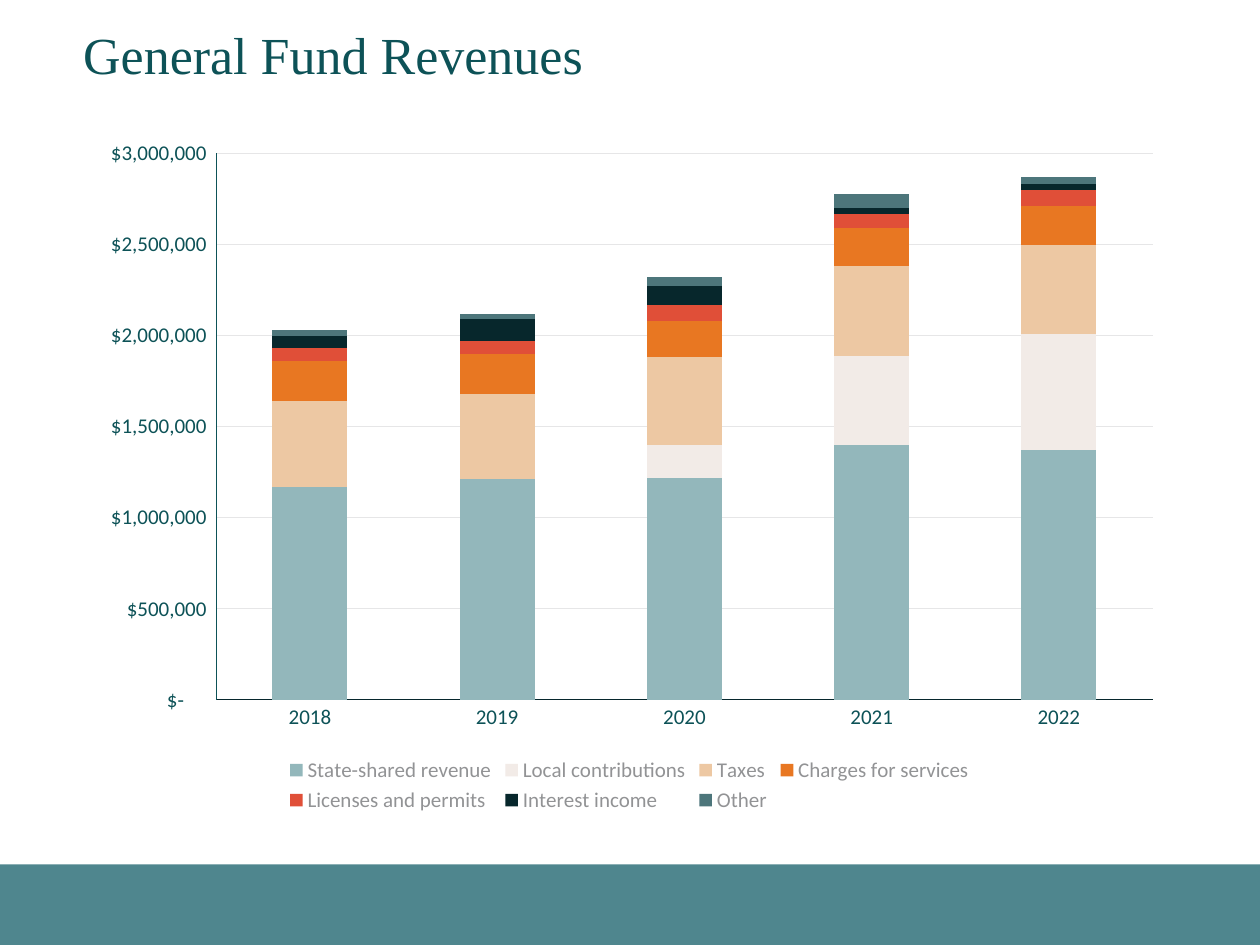
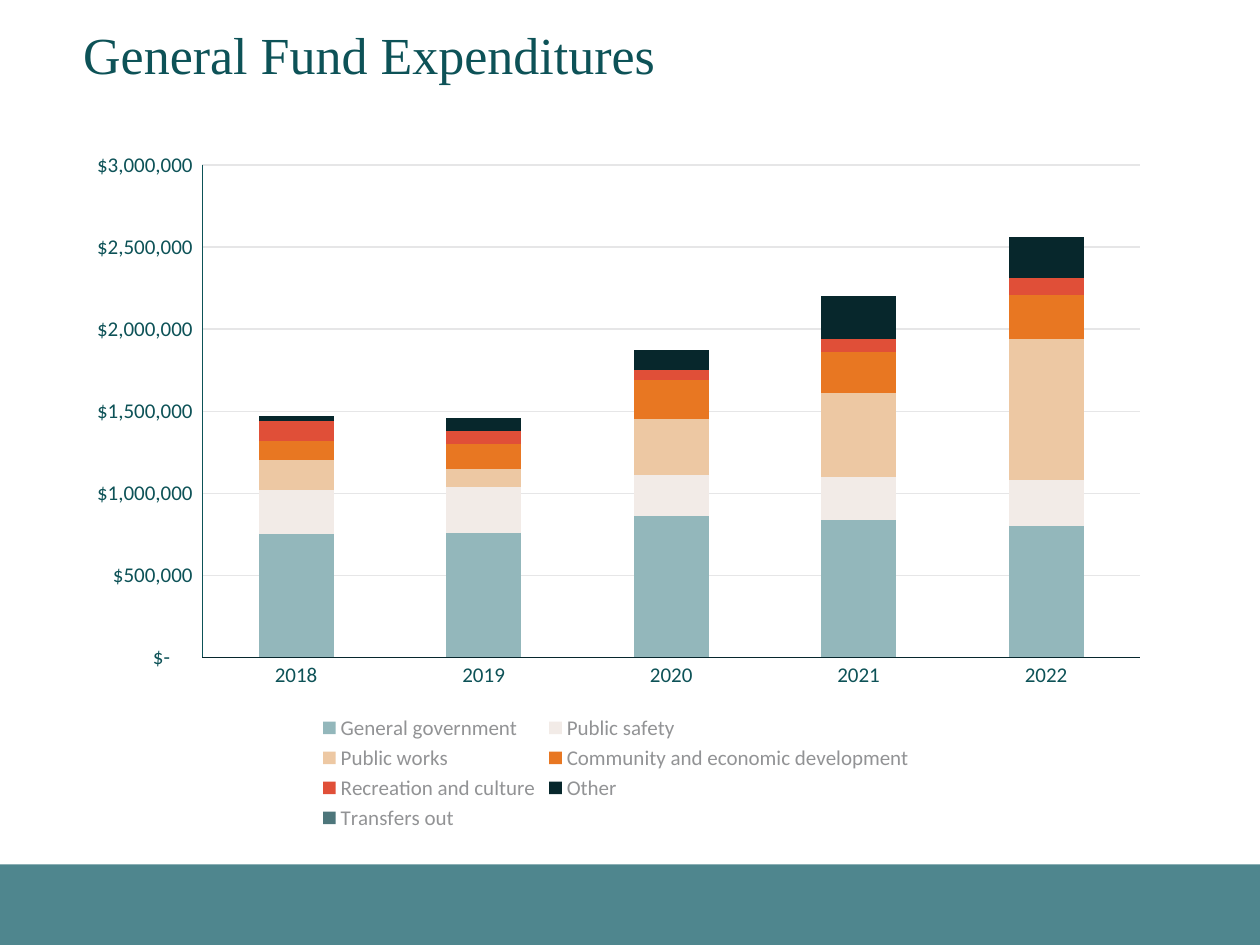
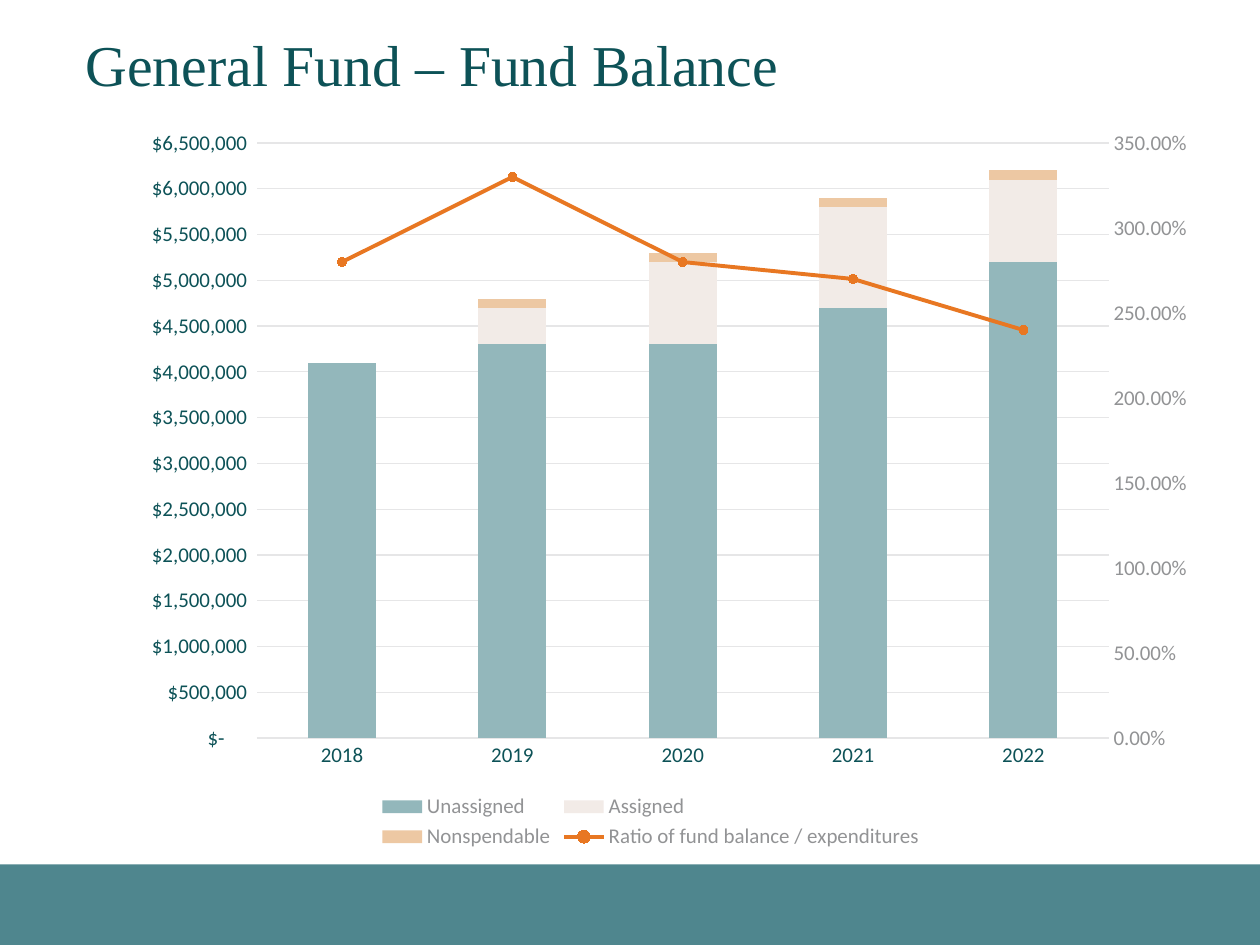
from pptx import Presentation, util as u
from pptx.chart import axis as ax, data as cd
from pptx.dml import color
from pptx.enum import chart as ch, shapes, text
from pptx.oxml import ns, parse_xml

# Shared style
SANS, SERIF = "Calibri", "Times New Roman"
TEAL, DARK, BAND, GREY, GRID = "0D5257", "07272D", "4F868E", "929395", "E6E6E7"
SERIES_COLORS = ["93B7BB", "F2EBE7", "EDC8A3", "E87722", "E04F38", "07272C", "4D767B"]
DOLLARS = '_("$"* #,##0_);_("$"* \\(#,##0\\);_("$"* "-"??_);_(@_)'
YEARS = ["2018", "2019", "2020", "2021", "2022"]
COLS, ROWS = 100, 75  # slide grid


def rgb(code):
    return color.RGBColor.from_string(code)


def put(obj, **values):
    for name, value in values.items():
        setattr(obj, name, value)


def set_font(font, size, code, name=SANS):
    put(font, size=u.Pt(size), name=name)
    font.color.rgb = rgb(code)


def set_line(line, code, width=0.75):
    if code is None:
        line.fill.background()
    else:
        line.color.rgb = rgb(code)
        line.width = u.Pt(width)


class Deck:
    """Holds the style, the grid and the current slide."""

    def __init__(self):
        self.prs = Presentation()
        put(self.prs, slide_width=u.Inches(10), slide_height=u.Inches(7.5))
        self.layout = self.prs.slide_layouts[5]
        self.s = None

    def box(self, col, row, cols, rows):
        w, h = self.prs.slide_width / COLS, self.prs.slide_height / ROWS
        return [u.Emu(round(n)) for n in (col * w, row * h, cols * w, rows * h)]

    def slide(self, title, at, size):
        self.s = self.prs.slides.add_slide(self.layout)
        sp = self.s.shapes.title
        put(sp, **dict(zip(("left", "top", "width", "height"), self.box(*at))))
        tf = sp.text_frame
        put(tf, text=title, word_wrap=True, auto_size=text.MSO_AUTO_SIZE.NONE,
            vertical_anchor=text.MSO_ANCHOR.MIDDLE)
        p = tf.paragraphs[0]
        put(p, alignment=text.PP_ALIGN.LEFT, line_spacing=0.9)
        set_font(p.runs[0].font, size, TEAL, SERIF)

    def layout_band(self, at):
        """Draw the footer band on the current slide, then move it to the layout."""
        sp = self.s.shapes.add_shape(shapes.MSO_SHAPE.RECTANGLE, *self.box(*at))
        sp.shadow.inherit = False
        sp.fill.solid()
        sp.fill.fore_color.rgb = rgb(BAND)
        set_line(sp.line, None)
        sp.element.nvSpPr.cNvPr.set("id", "20")
        self.layout.shapes.element.insert(2, sp.element)

    def axis(self, axis, line, code=TEAL, grid=False, number_format=None, **scale):
        put(axis, major_tick_mark=ch.XL_TICK_MARK.NONE, minor_tick_mark=ch.XL_TICK_MARK.NONE,
            has_major_gridlines=grid, **scale)
        if grid:
            set_line(axis.major_gridlines.format.line, GRID)
        if number_format:
            put(axis.tick_labels, number_format=number_format, number_format_is_linked=False)
        set_font(axis.tick_labels.font, 12, code)
        set_line(axis.format.line, line)

    def stacked_chart(self, at, series, cat_line, val_line, **scale):
        data = cd.CategoryChartData()
        data.categories = YEARS
        for name, values in series.items():
            data.add_series(name, values)
        chart = self.s.shapes.add_chart(
            ch.XL_CHART_TYPE.COLUMN_STACKED, *self.box(*at), data).chart
        put(chart, has_title=False, has_legend=True)
        set_font(chart.font, 10, "58595B")
        put(chart.legend, position=ch.XL_LEGEND_POSITION.BOTTOM, include_in_layout=False)
        set_font(chart.legend.font, 12, GREY)
        self.axis(chart.category_axis, cat_line)
        self.axis(chart.value_axis, val_line, grid=True, number_format=DOLLARS,
                  minimum_scale=0, **scale)
        plot = chart.plots[0]
        put(plot, gap_width=150, overlap=100, vary_by_categories=False)
        for ser, code in zip(plot.series, SERIES_COLORS):
            ser.format.fill.solid()
            ser.format.fill.fore_color.rgb = rgb(code)
        return chart

    def line_on_right_axis(self, chart, code, maximum):
        """Turn the last column series into a line read on a second axis."""
        area = chart.element.find(".//" + ns.qn("c:plotArea"))
        bars = area.find(ns.qn("c:barChart"))
        ser = bars.findall(ns.qn("c:ser"))[-1]
        for tag in ("c:invertIfNegative", "c:spPr"):
            for child in ser.findall(ns.qn(tag)):
                ser.remove(child)
        decl = ns.nsdecls("c")
        lines = parse_xml(
            f'<c:lineChart {decl}><c:grouping val="standard"/><c:varyColors val="0"/>'
            '<c:marker val="1"/><c:axId val="501"/><c:axId val="502"/></c:lineChart>')
        lines.insert(2, ser)
        bars.addnext(lines)
        last = area.findall(ns.qn("c:valAx"))[-1]
        for tag, own, other, hidden, side, crosses in (
                ("catAx", 501, 502, 1, "b", "autoZero"), ("valAx", 502, 501, 0, "r", "max")):
            axis = parse_xml(
                f'<c:{tag} {decl}><c:axId val="{own}"/><c:scaling/><c:delete val="{hidden}"/>'
                f'<c:axPos val="{side}"/><c:crossAx val="{other}"/>'
                f'<c:crosses val="{crosses}"/></c:{tag}>')
            last.addnext(axis)
            last = axis
        self.axis(ax.ValueAxis(last), None, GREY, number_format="0.00%",
                  minimum_scale=0, maximum_scale=maximum)
        line = chart.plots[1].series[0]
        line.smooth = False
        set_line(line.format.line, code, 2.25)
        put(line.marker, style=ch.XL_MARKER_STYLE.CIRCLE, size=5)
        line.marker.format.fill.solid()
        line.marker.format.fill.fore_color.rgb = rgb(code)
        set_line(line.marker.format.line, code)

    def plot_area(self, chart, **shares):
        area = chart.element.find(".//" + ns.qn("c:plotArea"))
        for old in area.findall(ns.qn("c:layout")):
            area.remove(old)
        modes = "".join(f'<c:{k}Mode val="edge"/>' for k in "xy")
        sizes = "".join(f'<c:{k} val="{v}"/>' for k, v in shares.items())
        area.insert(0, parse_xml(
            f'<c:layout {ns.nsdecls("c")}><c:manualLayout><c:layoutTarget val="inner"/>'
            f'{modes}{sizes}</c:manualLayout></c:layout>'))


def thousands(*values):
    return [v if v is None else v * 1000 for v in values]


def main():
    deck = Deck()
    heading = (5.6, 1.9, 48.5, 5.4)

    # Revenues
    deck.slide("General Fund Revenues", heading, 29.7)
    deck.layout_band((0, 68.6, COLS, 6.4))
    deck.stacked_chart((6.7, 10.1, 86.5, 54.8), {
        "State-shared revenue": thousands(1170, 1210, 1220, 1400, 1370),
        "Local contributions": thousands(0, 0, 180, 490, 640),
        "Taxes": thousands(470, 470, 480, 490, 490),
        "Charges for services": thousands(220, 220, 200, 210, 210),
        "Licenses and permits": thousands(70, 70, 90, 80, 90),
        "Interest income": thousands(70, 120, 100, 30, 30),
        "Other": thousands(30, 30, 50, 80, 40),
    }, DARK, TEAL, maximum_scale=3000000)

    # Expenditures
    deck.slide("General Fund Expenditures", heading, 29.7)
    deck.stacked_chart((5.6, 11, 86.6, 55.3), {
        "General government": thousands(750, 760, 860, 840, 800),
        "Public safety": thousands(270, 280, 250, 260, 280),
        "Public works": thousands(180, 110, 340, 510, 860),
        "Community and economic development": thousands(120, 150, 240, 250, 270),
        "Recreation and culture": thousands(120, 80, 60, 80, 100),
        "Other": thousands(30, 80, 120, 260, 250),
        "Transfers out": thousands(None, None, 0, 0, 0),
    }, DARK, TEAL, maximum_scale=3000000)

    # Fund balance, with its ratio to expenditures
    deck.slide("General Fund – Fund Balance", (5.8, -1.4, 88.4, 13.6), 33)
    chart = deck.stacked_chart((9.4, 10.2, 84.8, 57.6), {
        "Unassigned": thousands(4100, 4300, 4300, 4700, 5200),
        "Assigned": thousands(None, 400, 900, 1100, 900),
        "Nonspendable": thousands(0, 100, 100, 100, 100),
        "Ratio of fund balance / expenditures": [2.8, 3.3, 2.8, 2.7, 2.4],
    }, GRID, None, maximum_scale=6500000, major_unit=500000)
    deck.line_on_right_axis(chart, SERIES_COLORS[3], 3.5)
    deck.plot_area(chart, x=0.13, y=0.02, w=0.8, h=0.82)

    deck.prs.save("out.pptx")


if __name__ == "__main__":
    main()
